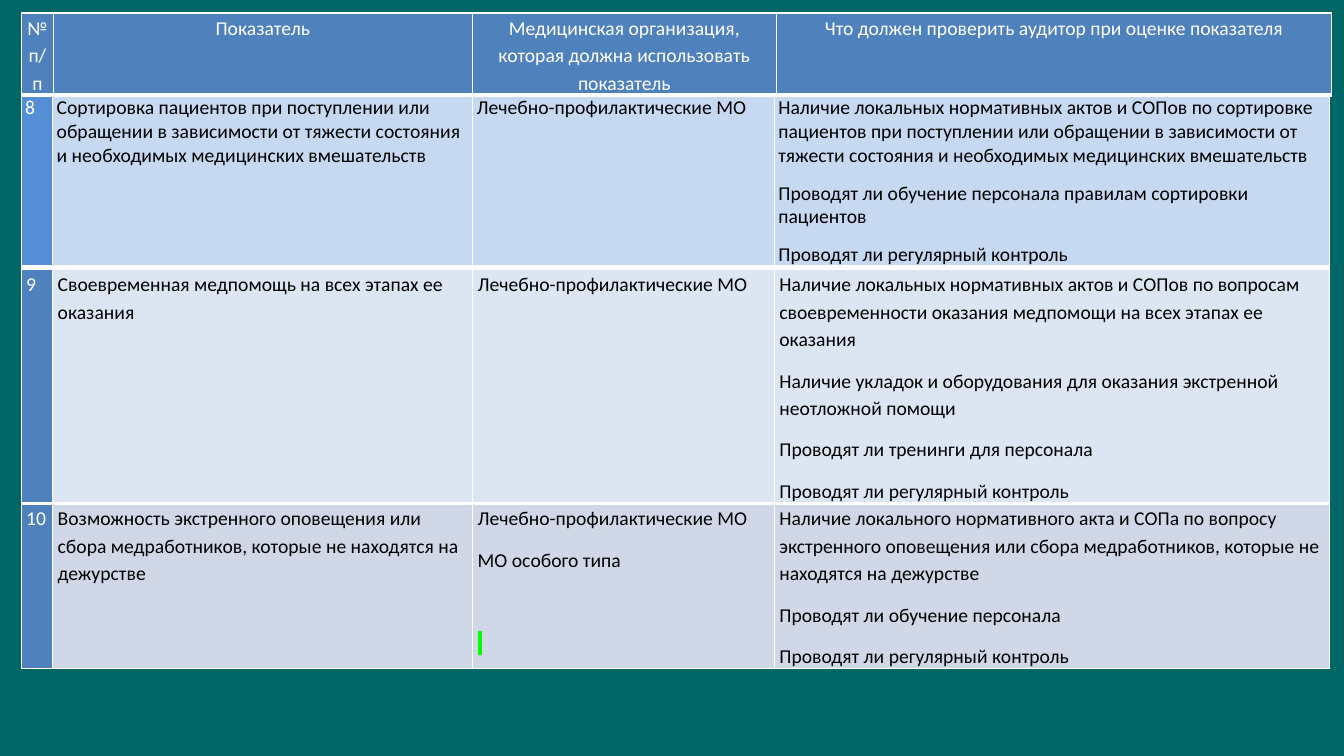
from lxml.etree import SubElement
from pptx import Presentation
from pptx.dml.color import RGBColor
from pptx.enum.text import PP_ALIGN
from pptx.oxml.ns import qn
from pptx.util import Pt

TEAL = RGBColor(0x00, 0x66, 0x66)
WHITE = RGBColor(0xFF, 0xFF, 0xFF)
BLACK = RGBColor(0x00, 0x00, 0x00)
GREEN = RGBColor(0x00, 0xFF, 0x00)
HEADER_BLUE = RGBColor(0x4F, 0x81, 0xBD)
NUMBER_BLUE = RGBColor(0x55, 0x8E, 0xD5)
LIGHT_BLUE = RGBColor(0xC6, 0xD9, 0xF1)
PALE_BLUE = RGBColor(0xDC, 0xE6, 0xF2)
GREY_BLUE = RGBColor(0xD0, 0xD8, 0xE8)

TABLE_LEFT = 15.25
HEADER_WIDTHS = (23, 299, 217.5, 396.5)
BODY_WIDTHS = (22.5, 300, 215.5, 396.5)
MARKER = "\N{NO-BREAK SPACE}"

HEADINGS = (
    "№ п/п",
    "Показатель",
    "Медицинская организация, которая должна использовать показатель",
    "Что должен проверить аудитор при оценке показателя",
)
TRIAGE = (
    "8",
    "Сортировка пациентов при поступлении или обращении в зависимости "
    "от тяжести состояния и необходимых медицинских вмешательств",
    "Лечебно-профилактические МО",
    "Наличие локальных нормативных актов и СОПов по сортировке пациентов при "
    "поступлении или обращении в зависимости от тяжести состояния и "
    "необходимых медицинских вмешательств\n"
    "Проводят ли обучение персонала правилам сортировки пациентов\n"
    "Проводят ли регулярный контроль",
)
TIMELY_CARE = (
    "9",
    "Своевременная медпомощь на всех этапах ее оказания",
    "Лечебно-профилактические МО",
    "Наличие локальных нормативных актов и СОПов по вопросам своевременности "
    "оказания медпомощи на всех этапах ее оказания\n"
    "Наличие укладок и оборудования для оказания экстренной неотложной помощи\n"
    "Проводят ли тренинги для персонала\n"
    "Проводят ли регулярный контроль",
)
EMERGENCY_CALL = (
    "10",
    "Возможность экстренного оповещения или сбора медработников, "
    "которые не находятся на дежурстве",
    f"Лечебно-профилактические МО\nМО особого типа\n{MARKER}",
    "Наличие локального нормативного акта и СОПа по вопросу экстренного "
    "оповещения или сбора медработников, которые не находятся на дежурстве\n"
    "Проводят ли обучение персонала\n"
    "Проводят ли регулярный контроль",
)


def set_borders(cell, bottom_width):
    properties = cell._tc.get_or_add_tcPr()
    widths = {"a:lnL": 1, "a:lnR": 1, "a:lnT": 1, "a:lnB": bottom_width}
    for position, (tag, width) in enumerate(widths.items()):
        line = properties.makeelement(qn(tag), {"w": str(Pt(width))})
        fill = SubElement(line, qn("a:solidFill"))
        SubElement(fill, qn("a:srgbClr"), val=str(WHITE))
        properties.insert(position, line)


def highlight(run, color):
    mark = SubElement(run._r.get_or_add_rPr(), qn("a:highlight"))
    SubElement(mark, qn("a:srgbClr"), val=str(color))


def write_cell(cell, text, color, inset, line_spacing, alignment):
    cell.margin_left = cell.margin_right = Pt(inset)
    cell.margin_top = cell.margin_bottom = Pt(0)
    cell.text = text
    for paragraph in cell.text_frame.paragraphs:
        paragraph.alignment = alignment
        paragraph.line_spacing = line_spacing
        paragraph.space_after = Pt(10)
        paragraph.font.name = "Calibri"
        paragraph.font.size = Pt(14)
        paragraph.font.color.rgb = color
        if paragraph.text == MARKER:
            paragraph.space_before = Pt(29.5)
            highlight(paragraph.runs[0], GREEN)


def add_audit_table(slide, top, widths, rows, inset, line_spacing=1.15,
                    alignment=PP_ALIGN.LEFT):
    """Each row is (texts, height, number fill, fill, text colour, bottom border)."""
    table = slide.shapes.add_table(
        len(rows), len(widths), Pt(TABLE_LEFT), Pt(top),
        Pt(sum(widths)), Pt(sum(row[1] for row in rows))).table
    table.first_row = table.horz_banding = False
    for column, width in zip(table.columns, widths):
        column.width = Pt(width)
    for row, (texts, height, number_fill, fill, color, bottom) in zip(table.rows, rows):
        row.height = Pt(height)
        for index, (cell, text) in enumerate(zip(row.cells, texts)):
            cell.fill.solid()
            cell.fill.fore_color.rgb = fill if index else number_fill
            set_borders(cell, bottom)
            write_cell(cell, text, color if index else WHITE, inset,
                       line_spacing, alignment)


def main():
    presentation = Presentation()
    presentation.slide_width, presentation.slide_height = Pt(960), Pt(540)
    slide = presentation.slides.add_slide(presentation.slide_layouts[6])
    slide.background.fill.solid()
    slide.background.fill.fore_color.rgb = TEAL

    add_audit_table(slide, 68.5, BODY_WIDTHS, [
        (TRIAGE, 122, NUMBER_BLUE, LIGHT_BLUE, BLACK, 3),
    ], inset=2.75, line_spacing=1.0)
    add_audit_table(slide, 9.25, HEADER_WIDTHS, [
        (HEADINGS, 58.5, HEADER_BLUE, HEADER_BLUE, WHITE, 3),
    ], inset=2.25, alignment=PP_ALIGN.CENTER)
    add_audit_table(slide, 192.5, BODY_WIDTHS, [
        (TIMELY_CARE, 166.5, HEADER_BLUE, PALE_BLUE, BLACK, 3),
        (EMERGENCY_CALL, 118, HEADER_BLUE, GREY_BLUE, BLACK, 1),
    ], inset=3.5)

    presentation.save("out.pptx")


if __name__ == "__main__":
    main()
